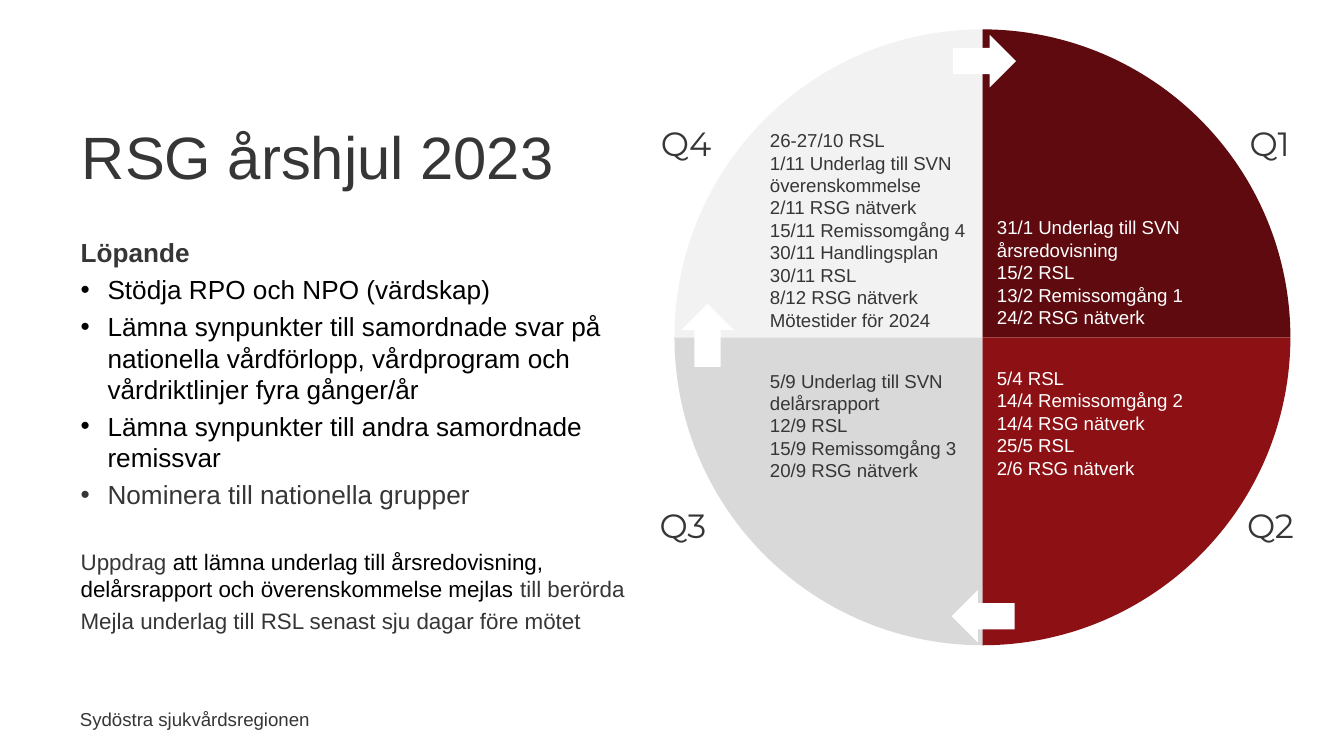
from lxml import etree
from pptx import Presentation
from pptx.chart.data import CategoryChartData
from pptx.dml.color import RGBColor
from pptx.enum import chart as charts, shapes, text
from pptx.oxml import ns
from pptx.util import Pt

INK = RGBColor(0x36, 0x36, 0x36)
BLACK = RGBColor(0, 0, 0)
WHITE = RGBColor(0xFF, 0xFF, 0xFF)
DARK_RED = RGBColor(0x5E, 0x0A, 0x0E)
RED = RGBColor(0x8D, 0x10, 0x15)
GREY = RGBColor(0xD9, 0xD9, 0xD9)
PALE = RGBColor(0xF2, 0xF2, 0xF2)

TITLE = "RSG årshjul 2023"
FOOTER = "Sydöstra sjukvårdsregionen"

BODY = [
    dict(size=14, spans=[("Löpande", INK)], bold=True),
    dict(size=14, spans=[("Stödja RPO och NPO (värdskap)", BLACK)], bullet=True),
    dict(size=14, spans=[("Lämna synpunkter till samordnade svar på nationella vårdförlopp, "
                          "vårdprogram och vårdriktlinjer fyra gånger/år", BLACK)], bullet=True),
    dict(size=14, spans=[("Lämna synpunkter till andra samordnade remissvar", BLACK)], bullet=True),
    dict(size=14, spans=[("Nominera till nationella grupper", INK)], bullet=True),
    dict(size=12, spans=[("Uppdrag ", INK),
                         ("att lämna underlag till årsredovisning, delårsrapport och "
                          "överenskommelse mejlas ", BLACK),
                         ("till berörda", INK)], before=17.4),
    dict(size=12, spans=[("Mejla underlag till RSL senast sju dagar före mötet", INK)]),
]

QUARTERS = [
    dict(name="Q1", fill=DARK_RED, color=WHITE, label=(662.4, 62.6), area=(527, 112.3, 121.7, 67.7),
         lines=["31/1 Underlag till SVN årsredovisning", "15/2 RSL",
                "13/2 Remissomgång 1", "24/2 RSG nätverk"]),
    dict(name="Q2", fill=RED, color=WHITE, label=(661, 267.1), area=(527, 193, 139.7, 67.7),
         lines=["5/4 RSL", "14/4 Remissomgång 2", "14/4 RSG nätverk", "25/5 RSL",
                "2/6 RSG nätverk"]),
    dict(name="Q3", fill=GREY, color=INK, label=(346.3, 267.1), area=(405.4, 194.4, 121.7, 67.7),
         lines=["5/9 Underlag till SVN delårsrapport", "12/9 RSL",
                "15/9 Remissomgång 3", "20/9 RSG nätverk"]),
    dict(name="Q4", fill=PALE, color=INK, label=(347, 62.6), area=(405.4, 65.5, 121, 116.6),
         lines=["26-27/10 RSL\n1/11 Underlag till SVN överenskommelse", "2/11 RSG nätverk",
                "15/11 Remissomgång 4", "30/11 Handlingsplan", "30/11 RSL",
                "8/12 RSG nätverk", "Mötestider för 2024"]),
]

ARROWS = [(509.8, 316.1, 180), (362.2, 165.6, 270), (510.5, 18.7, 0)]
ARROW_SIZE = (33.8, 28.1)
LABEL_SIZE = (41.8, 28.8)
CHART_AREA = (222.5, 5.8, 607.7, 349.9)
WHEEL = 330


def points(*values):
    return [Pt(value) for value in values]


def style(font, size, color, name="Arial", bold=False):
    font.size, font.name, font.bold = Pt(size), name, bold
    font.color.rgb = color


def add_text(page, area, lines, size, color, name="Arial", wrap=True, align=text.PP_ALIGN.LEFT):
    frame = page.shapes.add_textbox(*points(*area)).text_frame
    frame.word_wrap = wrap
    frame.auto_size = text.MSO_AUTO_SIZE.SHAPE_TO_FIT_TEXT
    for index, line in enumerate(lines):
        para = frame.add_paragraph() if index else frame.paragraphs[0]
        para.text = line
        para.alignment = align
        for span in para.runs:
            style(span.font, size, color, name)


def place(box, area):
    box.left, box.top, box.width, box.height = points(*area)
    box.text_frame.word_wrap = True
    box.text_frame.auto_size = text.MSO_AUTO_SIZE.NONE


def set_bullet(para, bullet):
    props = para._p.get_or_add_pPr()
    indent = Pt(14.4) if bullet else 0
    props.set("marL", str(indent))
    props.set("indent", str(-indent))
    if bullet:
        etree.SubElement(props, ns.qn("a:buFont")).set("typeface", "Arial")
        etree.SubElement(props, ns.qn("a:buChar")).set("char", "•")
    else:
        etree.SubElement(props, ns.qn("a:buNone"))


def fill_body(box):
    frame = box.text_frame
    frame.vertical_anchor = text.MSO_ANCHOR.TOP
    for index, item in enumerate(BODY):
        para = frame.add_paragraph() if index else frame.paragraphs[0]
        set_bullet(para, item.get("bullet", False))
        para.alignment = text.PP_ALIGN.LEFT
        para.space_before = Pt(item.get("before", 0))
        para.space_after = Pt(3)
        for words, color in item["spans"]:
            span = para.add_run()
            span.text = words
            style(span.font, item["size"], color, bold=item.get("bold", False))


def add_wheel(page):
    data = CategoryChartData()
    data.categories = [str(number) for number in range(1, len(QUARTERS) + 1)]
    data.add_series("Series 1", [25] * len(QUARTERS))
    chart = page.shapes.add_chart(charts.XL_CHART_TYPE.PIE, *points(*CHART_AREA), data).chart
    chart.has_title = chart.has_legend = False
    style(chart.font, 18, INK, "Times New Roman")
    for index, quarter in enumerate(QUARTERS):
        part = chart.plots[0].series[0].points[index].format
        part.fill.solid()
        part.fill.fore_color.rgb = quarter["fill"]
        part.line.fill.background()

    plot_area = chart._chartSpace.chart.plotArea
    for old in plot_area.findall(ns.qn("c:layout")):
        plot_area.remove(old)
    layout = etree.Element(ns.qn("c:layout"))
    plot_area.insert(0, layout)
    manual = etree.SubElement(layout, ns.qn("c:manualLayout"))
    wide, high = (WHEEL / side for side in CHART_AREA[2:])
    settings = [("layoutTarget", "inner"), ("xMode", "edge"), ("yMode", "edge"),
                ("x", (1 - wide) / 2), ("y", (1 - high) / 2), ("w", wide), ("h", high)]
    for tag, value in settings:
        etree.SubElement(manual, ns.qn("c:" + tag)).set("val", str(value))


def add_arrow(page, left, top, rotation):
    arrow = page.shapes.add_shape(shapes.MSO_SHAPE.RIGHT_ARROW, *points(left, top, *ARROW_SIZE))
    arrow.rotation = rotation
    arrow.shadow.inherit = False
    arrow.fill.solid()
    arrow.fill.fore_color.rgb = WHITE
    arrow.line.fill.background()


def main():
    deck = Presentation()
    deck.slide_width, deck.slide_height = points(720, 405)
    page = deck.slides.add_slide(deck.slide_layouts[1])

    title = page.shapes.title
    place(title, (36.7, 49.7, 648, 67.7))
    title.text_frame.text = TITLE
    title.text_frame.vertical_anchor = text.MSO_ANCHOR.MIDDLE
    heading = title.text_frame.paragraphs[0]
    heading.alignment = text.PP_ALIGN.LEFT
    style(heading.runs[0].font, 32, INK)

    body = page.placeholders[1]
    place(body, (36, 123.1, 306.7, 221))
    fill_body(body)

    add_text(page, (34.6, 375.8, 138.2, 19.4), [FOOTER], 10, INK,
             wrap=False, align=text.PP_ALIGN.RIGHT)
    add_wheel(page)
    for quarter in QUARTERS:
        add_text(page, quarter["area"], quarter["lines"], 10, quarter["color"])
        add_text(page, quarter["label"] + LABEL_SIZE, [quarter["name"]], 18, INK,
                 "Montserrat", wrap=False)
    for arrow in ARROWS:
        add_arrow(page, *arrow)
    deck.save("out.pptx")


if __name__ == "__main__":
    main()
